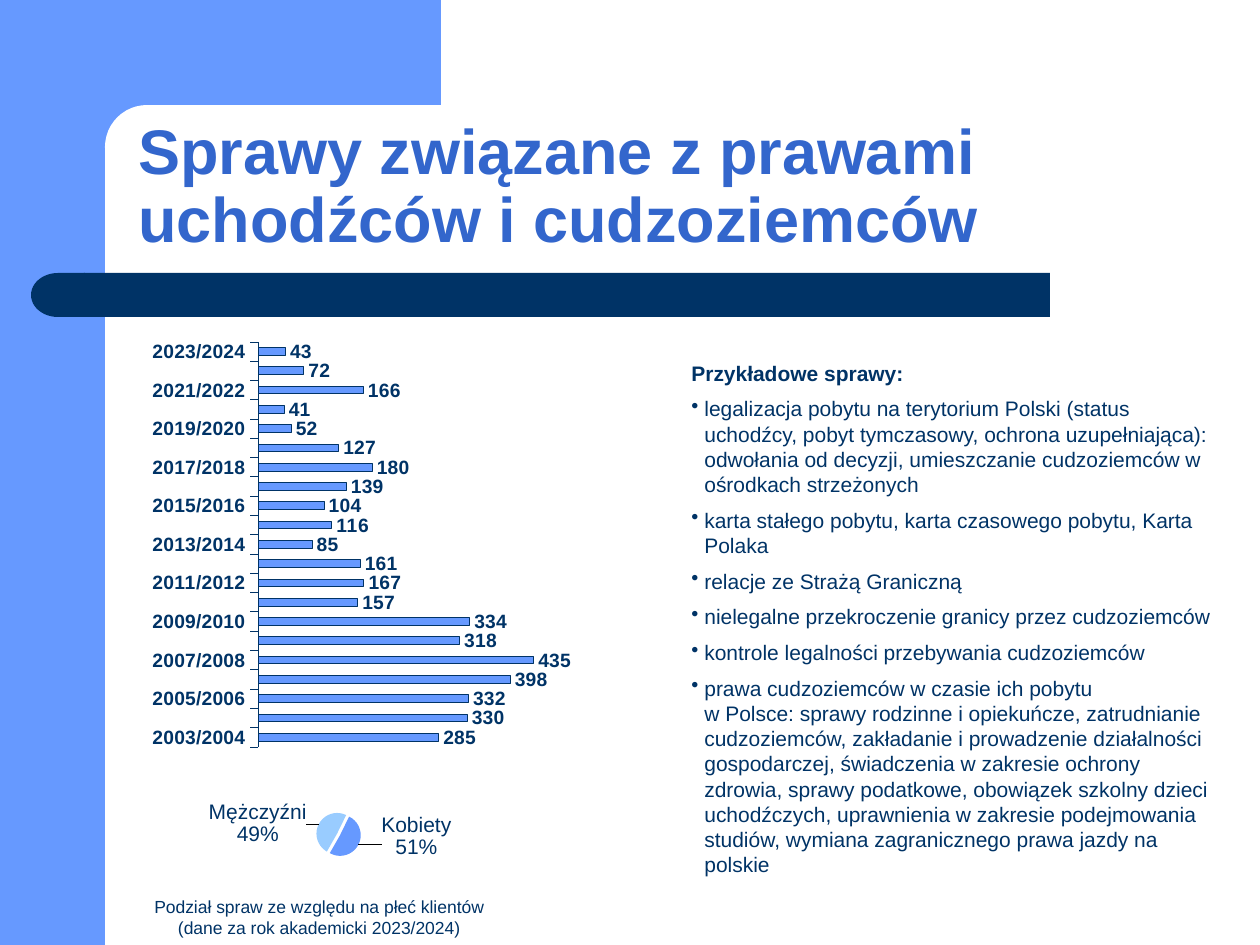
from copy import deepcopy
from dataclasses import dataclass

from lxml.etree import SubElement
from pptx import Presentation
from pptx.chart.data import CategoryChartData
from pptx.dml.color import RGBColor
from pptx.enum.chart import XL_CHART_TYPE, XL_LABEL_POSITION, XL_TICK_MARK
from pptx.enum.shapes import MSO_SHAPE
from pptx.enum.text import MSO_ANCHOR, PP_ALIGN
from pptx.oxml.ns import qn
from pptx.util import Emu, Pt


@dataclass(frozen=True)
class Theme:
    font: str = "Arial"
    white: str = "FFFFFF"
    blue: str = "6699FF"
    light: str = "99CCFF"
    navy: str = "003366"
    heading: str = "3366CC"
    title_size: int = 36
    body_size: int = 12
    axis_size: int = 11
    note_size: int = 10


THEME = Theme()
PX_PER_INCH = 126
BULLET_INDENT = 13

TITLE = "Sprawy związane z prawami uchodźców i cudzoziemców"
EXAMPLES_HEADING = "Przykładowe sprawy:"
EXAMPLES = [
    "legalizacja pobytu na terytorium Polski (status uchodźcy, pobyt tymczasowy, "
    "ochrona uzupełniająca): odwołania od decyzji, umieszczanie cudzoziemców w "
    "ośrodkach strzeżonych",
    "karta stałego pobytu, karta czasowego pobytu, Karta Polaka",
    "relacje ze Strażą Graniczną",
    "nielegalne przekroczenie granicy przez cudzoziemców",
    "kontrole legalności przebywania cudzoziemców",
    "prawa cudzoziemców w czasie ich pobytu\vw Polsce: sprawy rodzinne i opiekuńcze, "
    "zatrudnianie cudzoziemców, zakładanie i prowadzenie działalności gospodarczej, "
    "świadczenia w zakresie ochrony zdrowia, sprawy podatkowe, obowiązek szkolny "
    "dzieci uchodźczych, uprawnienia w zakresie podejmowania studiów, wymiana "
    "zagranicznego prawa jazdy na polskie",
]
NOTE = "Podział spraw ze względu na płeć klientów (dane za rok akademicki 2023/2024)"
CASES = [285, 330, 332, 398, 435, 318, 334, 157, 167, 161, 85, 116, 104, 139,
         180, 127, 52, 41, 166, 72, 43]
YEARS = [f"{year}/{year + 1}" for year in range(2003, 2003 + len(CASES))]
CLIENTS = {"Kobiety": 51, "Mężczyźni": 49}


def px(length):
    return Emu(round(length * 914400 / PX_PER_INCH))


def box(*lengths):
    return [px(length) for length in lengths]


def rgb(color):
    return RGBColor.from_string(color)


def style_font(font, size, color=THEME.navy, bold=False):
    font.name = THEME.font
    font.size = Pt(size)
    font.bold = bold
    font.color.rgb = rgb(color)


def add_panel(slide, kind, bounds, color, corner=None, rotation=0):
    panel = slide.shapes.add_shape(kind, *box(*bounds))
    panel.shadow.inherit = False
    panel.fill.solid()
    panel.fill.fore_color.rgb = rgb(color)
    panel.line.fill.background()
    panel.rotation = rotation
    if corner is not None:
        panel.adjustments[0] = corner


def add_text_frame(slide, bounds, anchor=MSO_ANCHOR.TOP):
    frame = slide.shapes.add_textbox(*box(*bounds)).text_frame
    frame.word_wrap = True
    frame.vertical_anchor = anchor
    return frame


def write(frame, text, *, size, color=THEME.navy, bold=False, align=PP_ALIGN.LEFT,
          spacing=None, before=0, bullet=False):
    paragraph = frame.paragraphs[0]
    if paragraph.runs:
        paragraph = frame.add_paragraph()
    paragraph.text = text
    paragraph.alignment = align
    paragraph.line_spacing = spacing
    paragraph.space_before = Pt(before)
    for run in paragraph.runs:
        style_font(run.font, size, color, bold)
    for line_break in paragraph._p.findall(qn("a:br")):
        line_break.append(deepcopy(paragraph.runs[0]._r.rPr))
    if bullet:
        properties = paragraph._p.get_or_add_pPr()
        properties.set("marL", str(px(BULLET_INDENT)))
        properties.set("indent", str(-px(BULLET_INDENT)))
        SubElement(properties, qn("a:buChar"), char="•")


def set_layout(parent, position, **values):
    for old in parent.findall(qn("c:layout")):
        parent.remove(old)
    layout = SubElement(parent, qn("c:layout"))
    manual = SubElement(layout, qn("c:manualLayout"))
    for tag, value in values.items():
        SubElement(manual, qn(f"c:{tag}"), val=str(value))
    parent.insert(position, layout)


def add_chart(slide, kind, bounds, categories, values, plot_area):
    data = CategoryChartData()
    data.categories = categories
    data.add_series("Series 1", values)
    chart = slide.shapes.add_chart(kind, *box(*bounds), data).chart
    chart.has_title = False
    chart.has_legend = False
    style_font(chart.font, THEME.body_size)
    x, y, w, h = plot_area
    area = chart._chartSpace.find(f".//{qn('c:plotArea')}")
    set_layout(area, 0, layoutTarget="inner", xMode="edge", yMode="edge",
               x=x, y=y, w=w, h=h)
    return chart


def add_cases_chart(slide):
    chart = add_chart(slide, XL_CHART_TYPE.BAR_CLUSTERED, (105, 304, 546, 471),
                      YEARS, CASES, (0.28, 0.08, 0.58, 0.86))
    plot = chart.plots[0]
    plot.gap_width = 150
    plot.vary_by_categories = False

    count_axis = chart.value_axis
    count_axis.visible = False
    count_axis.has_major_gridlines = False
    count_axis.minimum_scale = 0
    count_axis.maximum_scale = 500

    year_axis = chart.category_axis
    year_axis.major_tick_mark = XL_TICK_MARK.OUTSIDE
    year_axis.format.line.color.rgb = rgb(THEME.navy)
    year_axis.format.line.width = Pt(0.15)
    style_font(year_axis.tick_labels.font, THEME.axis_size, bold=True)

    cases = plot.series[0]
    cases.format.fill.solid()
    cases.format.fill.fore_color.rgb = rgb(THEME.blue)
    cases.format.line.color.rgb = rgb(THEME.navy)
    cases.format.line.width = Pt(0.25)
    cases.data_labels.show_value = True
    cases.data_labels.position = XL_LABEL_POSITION.OUTSIDE_END
    style_font(cases.data_labels.font, THEME.axis_size, bold=True)


def add_clients_chart(slide):
    chart = add_chart(slide, XL_CHART_TYPE.PIE, (52, 760, 546, 149),
                      CLIENTS.keys(), CLIENTS.values(), (0.48, 0.35, 0.09, 0.3))
    plot = chart.plots[0]
    plot.vary_by_categories = True
    clients = plot.series[0]
    labels = clients.data_labels
    labels.show_value = False
    labels.show_percentage = True
    labels.show_category_name = True
    style_font(labels.font, THEME.body_size)

    slices = [(THEME.blue, 0.03, -0.23), (THEME.light, -0.01, 0.17)]
    for index, (color, shift_x, shift_y) in enumerate(slices):
        point = clients.points[index]
        point.format.fill.solid()
        point.format.fill.fore_color.rgb = rgb(color)
        point.format.line.fill.background()
        point.data_label.position = XL_LABEL_POSITION.OUTSIDE_END
        style_font(point.data_label.font, THEME.body_size)

        label = clients._element.findall(f".//{qn('c:dLbl')}")[index]
        for tag, shown in (("showVal", "0"), ("showCatName", "1"), ("showPercent", "1")):
            label.find(qn(f"c:{tag}")).set("val", shown)
        SubElement(label, qn("c:separator")).text = "\n"
        set_layout(label, 1, x=shift_x, y=shift_y)

    explosion = SubElement(clients._element, qn("c:explosion"), val="8")
    clients._element.find(qn("c:dPt")).addprevious(explosion)
    SubElement(plot._element, qn("c:firstSliceAng"), val="26")


def main():
    deck = Presentation()
    deck.slide_width, deck.slide_height = box(1260, 945)
    slide = deck.slides.add_slide(deck.slide_layouts[6])

    add_panel(slide, MSO_SHAPE.RECTANGLE, (0, 0, 105, 945), THEME.blue)
    add_panel(slide, MSO_SHAPE.RECTANGLE, (94, 0, 347, 147), THEME.blue)
    add_panel(slide, MSO_SHAPE.ROUNDED_RECTANGLE, (105, 105, 703, 84), THEME.white, corner=0.5)
    add_panel(slide, MSO_SHAPE.RECTANGLE, (84, 273, 966, 44), THEME.navy)
    add_panel(slide, MSO_SHAPE.FLOWCHART_DELAY, (31, 273, 54, 44), THEME.navy, rotation=180)

    title = add_text_frame(slide, (126, 105, 1103, 157), MSO_ANCHOR.BOTTOM)
    write(title, TITLE, size=THEME.title_size, color=THEME.heading, bold=True, spacing=0.9)

    examples = add_text_frame(slide, (679, 354, 556, 547))
    write(examples, EXAMPLES_HEADING, size=THEME.body_size, bold=True, before=6)
    for example in EXAMPLES:
        write(examples, example, size=THEME.body_size, before=6, bullet=True)

    add_cases_chart(slide)
    add_clients_chart(slide)
    note = add_text_frame(slide, (123, 890, 392, 55))
    write(note, NOTE, size=THEME.note_size, align=PP_ALIGN.CENTER, before=5)
    deck.save("out.pptx")


if __name__ == "__main__":
    main()
